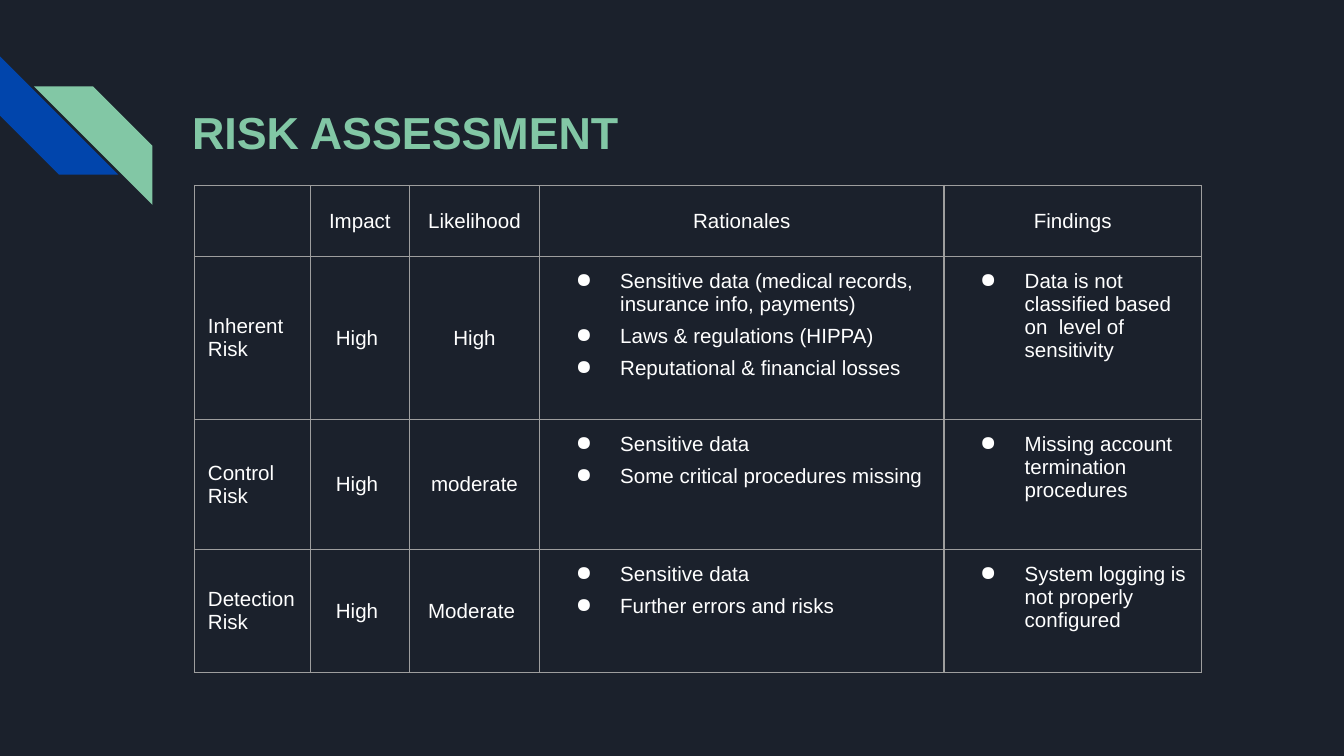
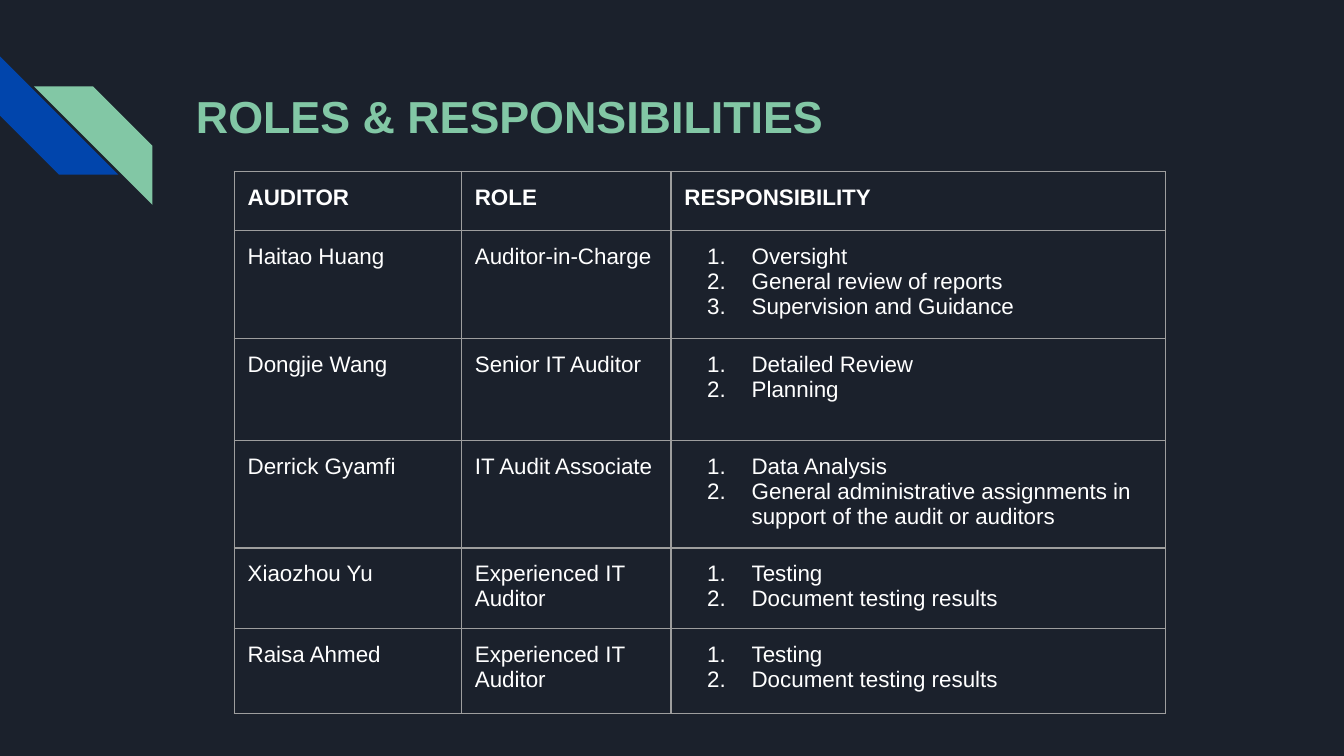
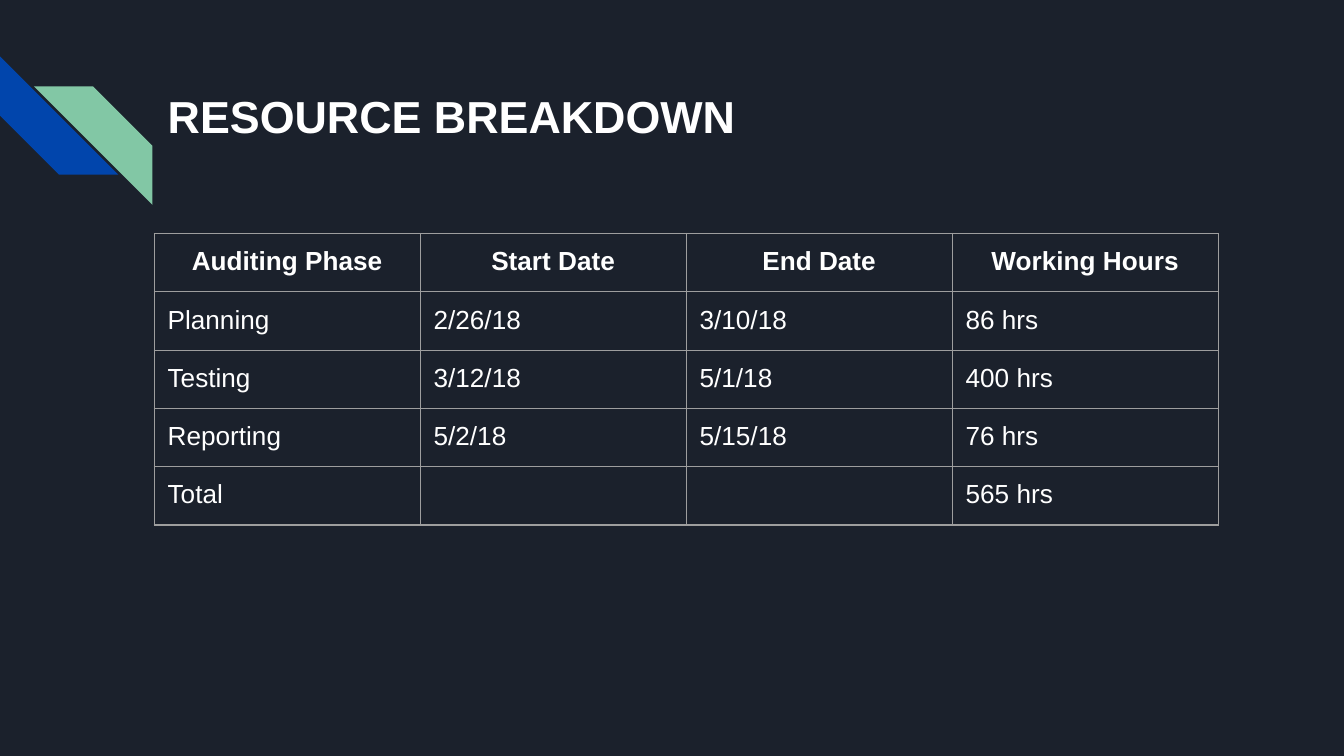
from dataclasses import dataclass
from typing import Optional, Union

from lxml.etree import SubElement
from pptx import Presentation
from pptx.dml.color import RGBColor
from pptx.enum.shapes import MSO_SHAPE
from pptx.enum.text import MSO_ANCHOR, PP_ALIGN
from pptx.oxml.ns import qn
from pptx.util import Pt

COLORS = {"night": "1B212C", "blue": "0145AC", "mint": "82C7A5",
          "white": "FFFFFF", "rule": "9E9E9E"}
FONT = "Arial"
INSET = Pt(7.2)
STRIPE_SIZE = 63.4
LIST_MARGIN, LIST_HANG = Pt(36), Pt(23.8)
BULLET, NUMBER = ("buChar", {"char": "●"}), ("buAutoNum", {"type": "arabicPeriod"})

Content = Union[str, tuple[str, ...]]  # a tuple is a list of points


@dataclass
class Stripe:
    left: float
    top: float
    color: str
    turned: bool


@dataclass
class Title:
    text: str
    left: float
    top: float
    width: float
    height: float
    color: str = "mint"


@dataclass
class Column:
    width: float
    centered: bool = False
    middle: bool = False
    marker: Optional[tuple[str, dict[str, str]]] = None
    gap: float = 0


@dataclass
class Grid:
    left: float
    top: float
    size: float
    columns: list[Column]
    heights: list[float]
    rows: list[tuple[Content, ...]]
    header: Column
    bold_header: bool = True


STRIPES = [Stripe(0, 30.2, "blue", True), Stripe(18.2, 46.3, "mint", False)]


def rgb(name: str) -> RGBColor:
    return RGBColor.from_string(COLORS[name])


def add_span(para, text: str, size: float, color: str, bold: bool) -> None:
    span = para.add_run()
    span.text = text
    span.font.name, span.font.size, span.font.bold = FONT, Pt(size), bold
    span.font.color.rgb = rgb(color)


def set_insets(target) -> None:
    target.margin_left = target.margin_right = INSET
    target.margin_top = target.margin_bottom = INSET


def draw_stripe(page, stripe: Stripe) -> None:
    shape = page.shapes.add_shape(MSO_SHAPE.DIAGONAL_STRIPE, Pt(stripe.left), Pt(stripe.top),
                                  Pt(STRIPE_SIZE), Pt(STRIPE_SIZE))
    shape.shadow.inherit = False
    shape.fill.solid()
    shape.fill.fore_color.rgb = rgb(stripe.color)
    shape.line.fill.background()
    if stripe.turned:
        shape.rotation = 270
    else:
        shape.element.spPr.find(qn("a:xfrm")).set("flipH", "1")


def draw_title(page, title: Title) -> None:
    box = page.shapes.add_textbox(Pt(title.left), Pt(title.top), Pt(title.width), Pt(title.height))
    frame = box.text_frame
    frame.word_wrap = True
    set_insets(frame)
    add_span(frame.paragraphs[0], title.text, 24, title.color, True)


def add_borders(cell) -> None:
    properties = cell._tc.get_or_add_tcPr()
    for position, side in enumerate(("lnL", "lnR", "lnT", "lnB")):
        line = properties.makeelement(qn(f"a:{side}"), {"w": str(Pt(0.75))})
        fill = SubElement(line, qn("a:solidFill"))
        SubElement(fill, qn("a:srgbClr"), val=COLORS["rule"])
        properties.insert(position, line)  # lines come before the fill


def add_marker(para, marker: tuple[str, dict[str, str]]) -> None:
    tag, attributes = marker
    properties = para._p.get_or_add_pPr()
    properties.set("marL", str(LIST_MARGIN))
    properties.set("indent", str(-LIST_HANG))
    color = SubElement(properties, qn("a:buClr"))
    SubElement(color, qn("a:srgbClr"), val=COLORS["white"])
    SubElement(properties, qn(f"a:{tag}"), attributes)


def fill_cell(cell, content: Content, style: Column, size: float, bold: bool) -> None:
    cell.fill.background()
    add_borders(cell)
    set_insets(cell)
    cell.vertical_anchor = MSO_ANCHOR.MIDDLE if style.middle else MSO_ANCHOR.TOP
    frame = cell.text_frame
    points = (content,) if isinstance(content, str) else content
    for index, text in enumerate(points):
        para = frame.add_paragraph() if index else frame.paragraphs[0]
        para.alignment = PP_ALIGN.CENTER if style.centered else PP_ALIGN.LEFT
        if style.gap and index:
            para.space_before = Pt(style.gap)
            if index == len(points) - 1:
                para.space_after = Pt(style.gap)
        if style.marker:
            add_marker(para, style.marker)
        if text:
            add_span(para, text, size, "white", bold)
        else:  # keeps an empty cell from stretching its row
            SubElement(para._p, qn("a:endParaRPr"), sz=str(int(size * 100)))


def draw_grid(page, grid: Grid) -> None:
    width = sum(column.width for column in grid.columns)
    table = page.shapes.add_table(len(grid.rows), len(grid.columns), Pt(grid.left), Pt(grid.top),
                                  Pt(width), Pt(sum(grid.heights))).table
    table.first_row = table.horz_banding = False
    for index, column in enumerate(grid.columns):
        table.columns[index].width = Pt(column.width)
    for row, (height, contents) in enumerate(zip(grid.heights, grid.rows)):
        table.rows[row].height = Pt(height)
        for index, content in enumerate(contents):
            style = grid.columns[index] if row else grid.header
            fill_cell(table.cell(row, index), content, style, grid.size,
                      grid.bold_header and row == 0)


# Content of the pages
RISKS = Grid(
    104.2, 99.4, 11,
    [Column(62.1, middle=True), Column(53.1, True, True), Column(69.7, True, True),
     Column(216.7, marker=BULLET, gap=5), Column(138, marker=BULLET)],
    [38, 87.3, 69.9, 65.6],
    [("", "Impact", "Likelihood", "Rationales", "Findings"),
     ("Inherent Risk", "High ", "High",
      ("Sensitive data (medical records, insurance info, payments)",
       "Laws & regulations (HIPPA)", "Reputational & financial losses"),
      ("Data is not classified based on  level of sensitivity",)),
     ("Control Risk", "High ", "moderate",
      ("Sensitive data", "Some critical procedures missing"),
      ("Missing account termination procedures",)),
     ("Detection Risk", "High ", "Moderate ",
      ("Sensitive data", "Further errors and risks"),
      ("System logging is not properly configured",))],
    header=Column(0, True, True), bold_header=False)

TESTER_DUTIES = ("Testing", "Document testing results")
ROLES = Grid(
    125.5, 91.8, 12,
    [Column(121.7), Column(112.3), Column(265, marker=NUMBER)],
    [31.8, 55.7, 54.7, 54.9, 41, 45.4],
    [("AUDITOR", "ROLE", "RESPONSIBILITY"),
     ("Haitao Huang", "Auditor-in-Charge",
      ("Oversight", "General review of reports", "Supervision and Guidance")),
     ("Dongjie Wang", "Senior IT Auditor", ("Detailed Review", "Planning")),
     ("Derrick Gyamfi", "IT Audit Associate",
      ("Data Analysis",
       "General administrative assignments in support of the audit or auditors")),
     ("Xiaozhou Yu", "Experienced IT Auditor", TESTER_DUTIES),
     ("Raisa Ahmed", "Experienced IT Auditor", TESTER_DUTIES)],
    header=Column(0))

RESOURCES = Grid(
    82.6, 125.1, 14, [Column(142.5)] * 4, [30.1] * 5,
    [("Auditing Phase", "Start Date", "End Date", "Working Hours"),
     ("Planning", "2/26/18", "3/10/18", "86 hrs"),
     ("Testing", "3/12/18", "5/1/18", "400 hrs"),
     ("Reporting", "5/2/18", "5/15/18", "76 hrs"),
     ("Total", "", "", "565 hrs")],
    header=Column(0, True))

PAGES = [
    (Title("RISK ASSESSMENT", 95.8, 49, 471.6, 59), RISKS),
    (Title("ROLES & RESPONSIBILITIES", 97.9, 40.3, 554.4, 45.4), ROLES),
    (Title("RESOURCE BREAKDOWN", 82.8, 40.3, 554.4, 72, "white"), RESOURCES),
]


def main() -> None:
    deck = Presentation()
    deck.slide_width, deck.slide_height = Pt(720), Pt(405)
    for title, grid in PAGES:
        page = deck.slides.add_slide(deck.slide_layouts[6])
        page.background.fill.solid()
        page.background.fill.fore_color.rgb = rgb("night")
        for stripe in STRIPES:
            draw_stripe(page, stripe)
        draw_title(page, title)
        draw_grid(page, grid)
    deck.save("out.pptx")


if __name__ == "__main__":
    main()
